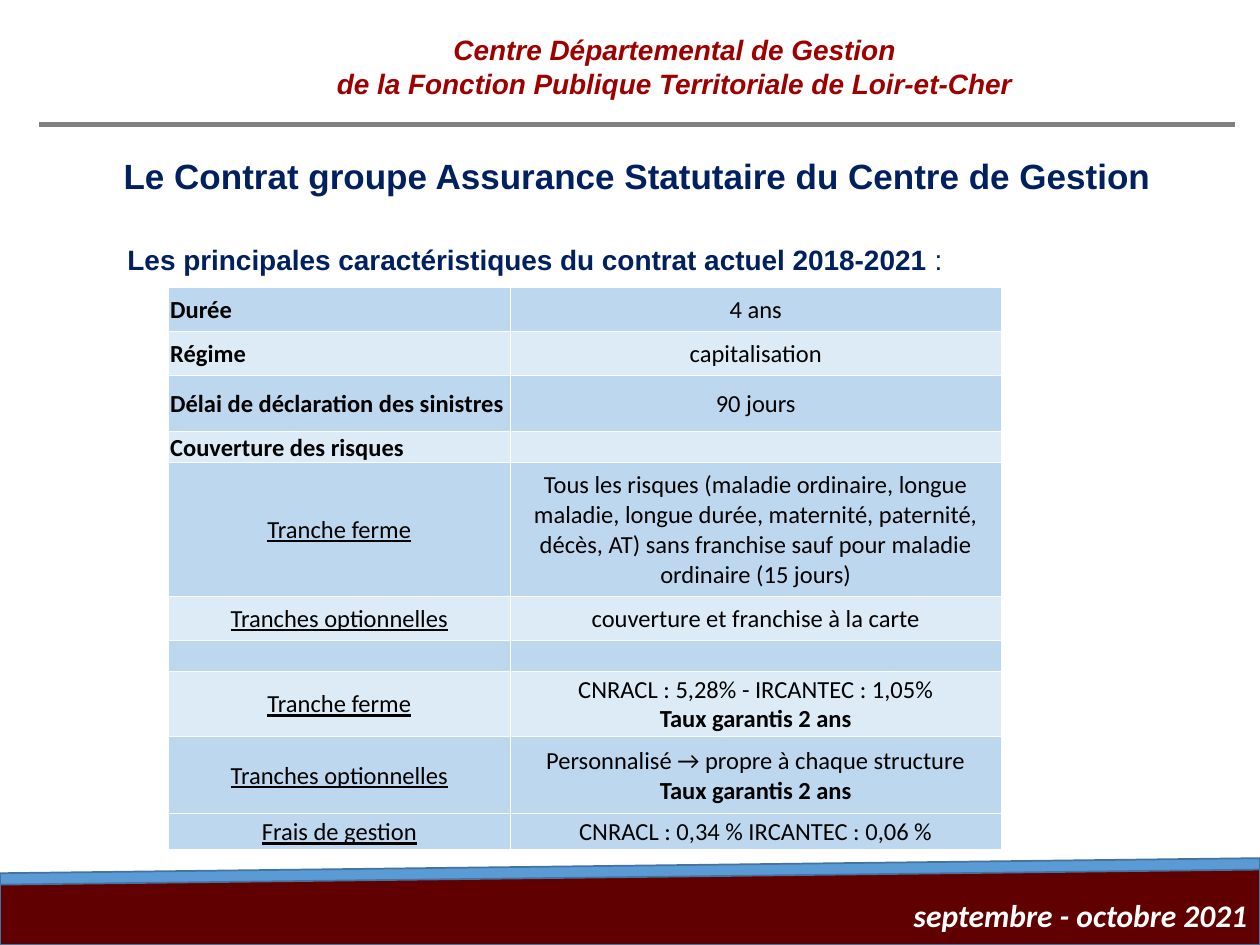
from dataclasses import dataclass

from lxml.etree import SubElement
from pptx import Presentation
from pptx.dml.color import RGBColor
from pptx.enum.shapes import MSO_CONNECTOR, MSO_SHAPE
from pptx.enum.text import MSO_ANCHOR, MSO_AUTO_SIZE, PP_ALIGN
from pptx.oxml import parse_xml
from pptx.oxml.ns import nsdecls, qn
from pptx.util import Cm, Pt

NAVY, DARK_RED, MAROON, WHITE = "002060", "9E0000", "600000", "FFFFFF"
BLUE, BLUE_EDGE, GREY, BLACK = "5B9BD5", "43739E", "808080", "000000"
ROW_FILLS = ("BDD7EE", "DDEBF7")

HEADER = dict(name="Arial", size=Pt(16), bold=True, italic=True, color=DARK_RED)
TITLE = dict(name="Arial", size=Pt(20), bold=True, color=NAVY)
SUBTITLE = dict(TITLE, size=Pt(16))
FOOTER = dict(name="Calibri", size=Pt(18), bold=True, italic=True, color=WHITE)
CELL = dict(name="Calibri", size=Pt(14), bold=False, color=BLACK)
BOLD_CELL = dict(CELL, bold=True)
UNDERLINED_CELL = dict(CELL, underline=True)


@dataclass
class Band:
    top: float
    fill: str
    text: str = ""


@dataclass
class Row:
    height: float
    label: str = ""
    value: str = ""
    guarantee: str = ""
    heading: bool = False
    shade: int = 0


BANDS = [Band(17.3, BLUE), Band(17.53, MAROON, "septembre - octobre 2021")]
RATE = "Taux garantis 2 ans"
ROWS = [
    Row(0.89, "Durée", "4 ans", heading=True),
    Row(0.89, "Régime", "capitalisation", heading=True, shade=1),
    Row(1.13, "Délai de déclaration des sinistres", "90 jours", heading=True),
    Row(0.62, "Couverture des risques", heading=True, shade=1),
    Row(2.69, "Tranche ferme",
        "Tous les risques (maladie ordinaire, longue maladie, longue durée, "
        "maternité, paternité, décès, AT) sans franchise sauf pour maladie "
        "ordinaire (15 jours)"),
    Row(0.89, "Tranches optionnelles", "couverture et franchise à la carte", shade=1),
    Row(0.6),
    Row(1.32, "Tranche ferme", "CNRACL : 5,28% - IRCANTEC : 1,05%", RATE, shade=1),
    Row(1.55, "Tranches optionnelles", "Personnalisé → propre à chaque structure", RATE),
    Row(0.73, "Frais de gestion", "CNRACL : 0,34 % IRCANTEC : 0,06 %"),
]


def rgb(color: str) -> RGBColor:
    return RGBColor.from_string(color)


def add_run(p, text: str, style: dict) -> None:
    r = p.add_run()
    r.text = text
    for key, value in style.items():
        if key == "color":
            r.font.color.rgb = rgb(value)
        else:
            setattr(r.font, key, value)


def write_lines(tf, lines: list, align) -> None:
    """Write (text, style) pairs, one paragraph each."""
    for i, (text, style) in enumerate(lines):
        p = tf.add_paragraph() if i else tf.paragraphs[0]
        p.alignment = align
        if text:
            add_run(p, text, style)
        else:
            SubElement(p._p, qn("a:endParaRPr"), sz=str(int(style["size"].pt * 100)))


def place(sp, left: float, top: float, width: float, height: float):
    """Move a placeholder and return its text frame, ready to fill."""
    sp.left, sp.top, sp.width, sp.height = map(Cm, (left, top, width, height))
    tf = sp.text_frame
    tf.auto_size = MSO_AUTO_SIZE.NONE
    tf.word_wrap = True
    tf.vertical_anchor = MSO_ANCHOR.MIDDLE
    tf.margin_left = tf.margin_right = 0
    return tf


def add_header(s) -> None:
    tf = s.shapes.add_textbox(Cm(2.69), Cm(0.53), Cm(21.82), Cm(1.63)).text_frame
    tf.word_wrap = True
    lines = ("Centre Départemental de Gestion",
             "de la Fonction Publique Territoriale de Loir-et-Cher")
    write_lines(tf, [(line, HEADER) for line in lines], PP_ALIGN.CENTER)

    rule = s.shapes.add_connector(MSO_CONNECTOR.STRAIGHT, Cm(0.79), Cm(2.51),
                                  Cm(24.89), Cm(2.51))
    rule.line.color.rgb = rgb(GREY)
    rule.line.width = Pt(2.5)
    SubElement(rule._element.spPr, qn("a:effectLst"))


def add_band(s, band: Band) -> None:
    sp = s.shapes.add_shape(MSO_SHAPE.FLOWCHART_MANUAL_INPUT, 0, Cm(band.top),
                            Cm(25.4), Cm(1.52))
    sp.shadow.inherit = False
    sp.fill.solid()
    sp.fill.fore_color.rgb = rgb(band.fill)
    sp.line.color.rgb = rgb(BLUE_EDGE)
    sp.line.width = Pt(1)
    if band.text:
        sp.text_frame.vertical_anchor = MSO_ANCHOR.MIDDLE
        write_lines(sp.text_frame, [(band.text, FOOTER)], PP_ALIGN.RIGHT)


def format_cell(cell, fill: str) -> None:
    """Set margins, thin white borders and the fill."""
    cell.vertical_anchor = MSO_ANCHOR.MIDDLE
    cell.margin_left = cell.margin_right = cell.margin_top = Cm(0.03)
    cell.margin_bottom = 0
    tc_pr = cell._tc.get_or_add_tcPr()
    for side in "LRTB":
        tc_pr.append(parse_xml(
            f'<a:ln{side} {nsdecls("a")} w="{Pt(0.5)}"><a:solidFill>'
            f'<a:srgbClr val="{WHITE}"/></a:solidFill></a:ln{side}>'))
    cell.fill.solid()
    cell.fill.fore_color.rgb = rgb(fill)


def add_contract_table(s, rows: list[Row]) -> None:
    widths = (6.88, 9.91)
    table = s.shapes.add_table(len(rows), len(widths), Cm(3.4), Cm(5.79),
                               Cm(sum(widths)), Cm(sum(r.height for r in rows))).table
    table.first_row = table.horz_banding = False
    for column, width in zip(table.columns, widths):
        column.width = Cm(width)
    for i, row in enumerate(rows):
        table.rows[i].height = Cm(row.height)
        label, value = table.cell(i, 0), table.cell(i, 1)
        for cell in (label, value):
            format_cell(cell, ROW_FILLS[row.shade])
        write_lines(label.text_frame,
                    [(row.label, BOLD_CELL if row.heading else UNDERLINED_CELL)],
                    PP_ALIGN.LEFT if row.heading else PP_ALIGN.CENTER)
        lines = [(row.value, CELL)]
        if row.guarantee:
            lines.append((row.guarantee, BOLD_CELL))
        write_lines(value.text_frame, lines, PP_ALIGN.CENTER)


def main() -> None:
    prs = Presentation()
    prs.slide_width, prs.slide_height = Cm(25.4), Cm(19.05)
    s = prs.slides.add_slide(prs.slide_layouts[1])

    add_header(s)
    for band in BANDS:
        add_band(s, band)

    title = place(s.shapes.title, 1.85, 2.93, 22, 1.2)
    write_lines(title, [("Le Contrat groupe Assurance Statutaire du Centre de Gestion",
                         TITLE)], PP_ALIGN.CENTER)

    p = place(s.placeholders[1], 2.57, 4.72, 20, 1).paragraphs[0]
    p.space_before = Pt(0)
    p_pr = p._p.get_or_add_pPr()
    p_pr.set("marL", "0")
    p_pr.set("indent", "0")
    SubElement(p_pr, qn("a:buNone"))
    add_run(p, "Les principales caractéristiques du contrat actuel 2018-2021 ", SUBTITLE)
    add_run(p, ":", dict(SUBTITLE, bold=False))

    add_contract_table(s, ROWS)
    prs.save("out.pptx")


if __name__ == "__main__":
    main()
